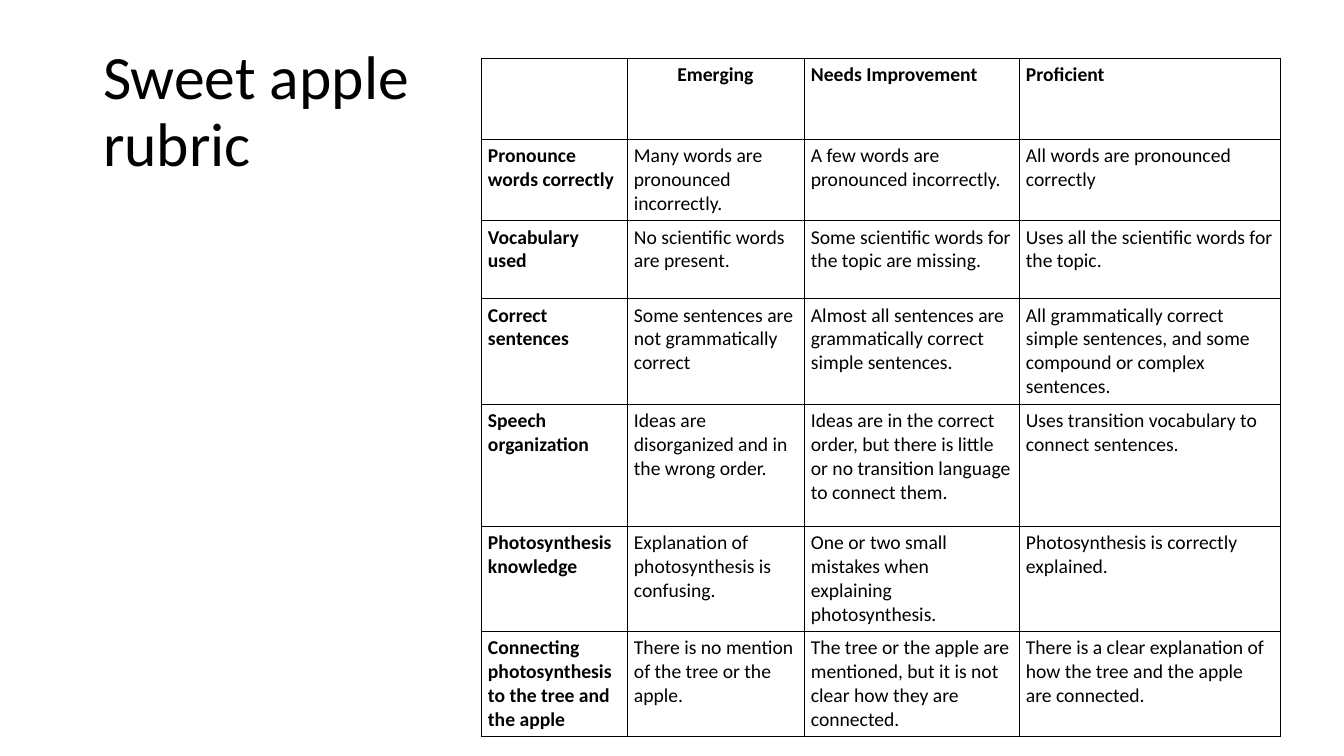
from lxml import etree
from pptx import Presentation
from pptx.dml.color import RGBColor
from pptx.enum.text import MSO_ANCHOR, MSO_AUTO_SIZE, PP_ALIGN
from pptx.oxml.ns import qn
from pptx.util import Pt

PX = 914400 / 100.8
FONT = "Calibri"
BLACK = RGBColor(0, 0, 0)
WHITE = RGBColor(255, 255, 255)
LEFT, CENTER = PP_ALIGN.LEFT, PP_ALIGN.CENTER
TOP, MIDDLE = MSO_ANCHOR.TOP, MSO_ANCHOR.MIDDLE
NO_FIT = MSO_AUTO_SIZE.NONE
TITLE_ONLY = 5

COL_WIDTHS = [146, 177, 215, 261]
ROW_HEIGHTS = [81, 81, 78, 105, 122, 105, 105]
RUBRIC = [
    ["", "Emerging", "Needs Improvement", "Proficient"],
    ["Pronounce words correctly",
     "Many words are pronounced incorrectly.",
     "A few words are pronounced incorrectly.",
     "All words are pronounced correctly"],
    ["Vocabulary used",
     "No scientific words are present.",
     "Some scientific words for the topic are missing.",
     "Uses all the scientific words for the topic."],
    ["Correct sentences",
     "Some sentences are not grammatically\ncorrect",
     "Almost all sentences are grammatically correct simple sentences.",
     "All grammatically correct simple sentences, and some compound or complex sentences."],
    ["Speech organization",
     "Ideas are disorganized and in the wrong order.",
     "Ideas are in the correct order, but there is little or no transition language "
     "to connect them.",
     "Uses transition vocabulary to connect sentences."],
    ["Photosynthesis knowledge",
     "Explanation of photosynthesis is confusing.",
     "One or two small mistakes when explaining photosynthesis.",
     "Photosynthesis is correctly explained."],
    ["Connecting photosynthesis to the tree and the apple",
     "There is no mention of the tree or the apple.",
     "The tree or the apple are mentioned, but it is not clear how they are connected.",
     "There is a clear explanation of how the tree and the apple are connected."],
]


def px(n):
    return round(n * PX)


def format_text(tf, size, bold, align):
    for p in tf.paragraphs:
        p.alignment = align
        for r in p.runs:
            r.font.name = FONT
            r.font.size = Pt(size)
            r.font.bold = bold
            r.font.color.rgb = BLACK


def add_borders(cell):
    tcPr = cell._tc.get_or_add_tcPr()
    for side in ("a:lnL", "a:lnR", "a:lnT", "a:lnB"):
        ln = etree.SubElement(tcPr, qn(side), w=str(Pt(0.5)))
        fill = etree.SubElement(ln, qn("a:solidFill"))
        etree.SubElement(fill, qn("a:srgbClr"), val=str(BLACK))


def format_cell(cell, text, bold, align):
    cell.text = text
    cell.margin_left = cell.margin_right = px(7)
    cell.margin_top = cell.margin_bottom = px(5)
    cell.vertical_anchor = TOP
    add_borders(cell)
    cell.fill.background()
    format_text(cell.text_frame, 14, bold, align)


def add_title(s, x, y, w, h):
    sp = s.shapes.title
    sp.left, sp.top, sp.width, sp.height = px(x), px(y), px(w), px(h)
    tf = sp.text_frame
    tf.text = "Sweet apple \vrubric"
    tf.word_wrap = True
    tf.auto_size = NO_FIT
    tf.vertical_anchor = MIDDLE
    tf.paragraphs[0].line_spacing = 0.9
    format_text(tf, 44, False, LEFT)


def add_rubric(s, x, y):
    table = s.shapes.add_table(len(RUBRIC), len(COL_WIDTHS), px(x), px(y),
                               px(sum(COL_WIDTHS)), px(sum(ROW_HEIGHTS))).table
    table.first_row = table.horz_banding = False
    for col, width in zip(table.columns, COL_WIDTHS):
        col.width = px(width)
    for i, (row, height) in enumerate(zip(table.rows, ROW_HEIGHTS)):
        row.height = px(height)
        for j, text in enumerate(RUBRIC[i]):
            align = CENTER if (i, j) == (0, 1) else LEFT
            format_cell(table.cell(i, j), text, i == 0 or j == 0, align)


def main():
    prs = Presentation()
    prs.slide_width, prs.slide_height = px(1344), px(756)
    s = prs.slides.add_slide(prs.slide_layouts[TITLE_ONLY])
    s.background.fill.solid()
    s.background.fill.fore_color.rgb = WHITE
    add_title(s, 93, 40, 1159, 146)
    add_rubric(s, 481, 58)
    prs.save("out.pptx")


if __name__ == "__main__":
    main()
